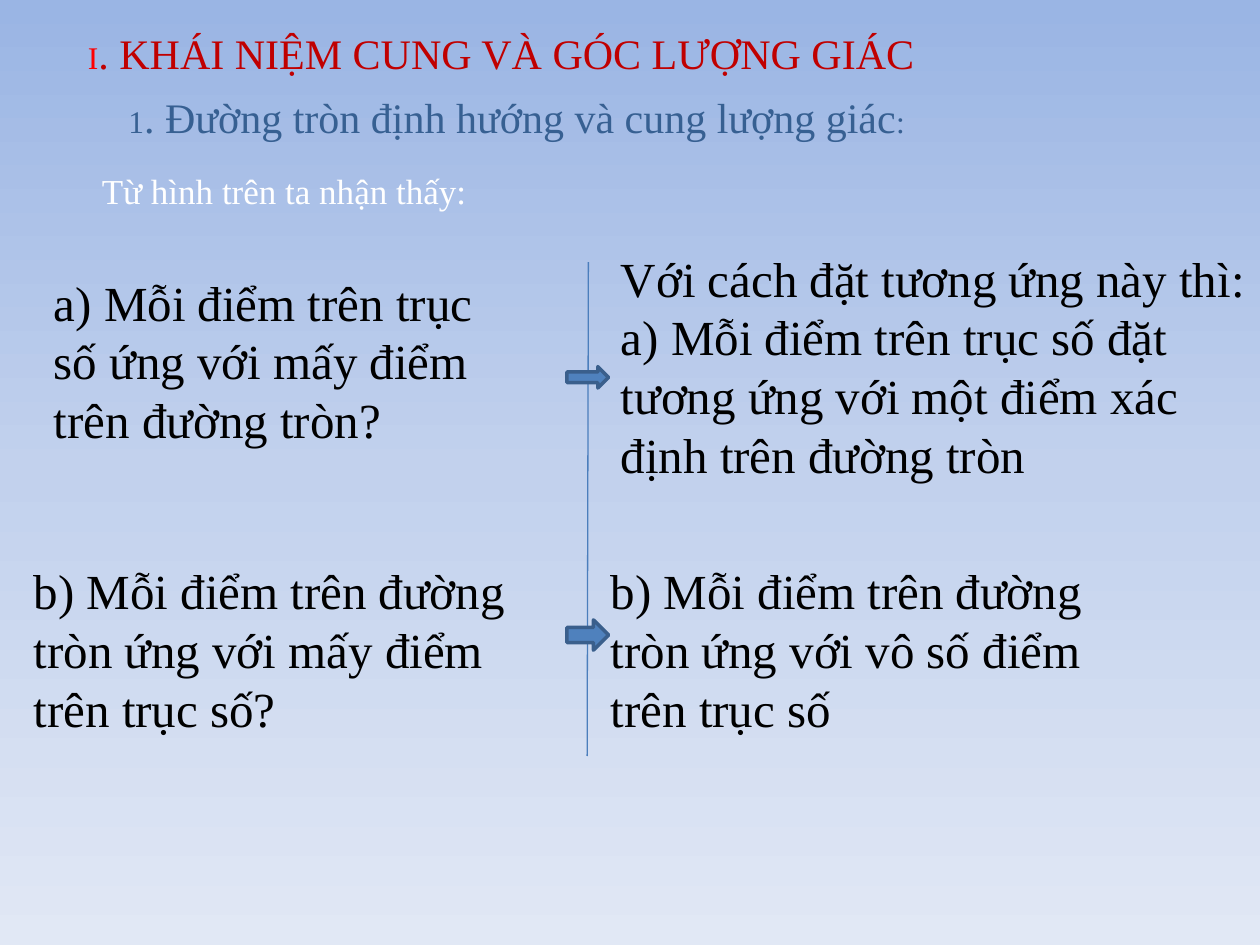
from copy import deepcopy

from lxml import etree
from pptx import Presentation
from pptx.dml.color import RGBColor
from pptx.enum import shapes, text
from pptx.oxml.ns import qn
from pptx.util import Inches, Pt

FONT = "Times New Roman"
BLACK = RGBColor(0x00, 0x00, 0x00)
WHITE = RGBColor(0xFF, 0xFF, 0xFF)
RED = RGBColor(0xFF, 0x00, 0x00)
DARK_RED = RGBColor(0xC0, 0x00, 0x00)
HEADING_BLUE = RGBColor(0x37, 0x60, 0x92)
DIVIDER_BLUE = RGBColor(0x4B, 0x7E, 0xBC)
ARROW_BLUE = RGBColor(0x4F, 0x81, 0xBD)
ARROW_EDGE = RGBColor(0x3A, 0x5F, 0x8C)
SKY = [(0, RGBColor(0x9A, 0xB5, 0xE4)),
       (0.5, RGBColor(0xC2, 0xD1, 0xED)),
       (1, RGBColor(0xE1, 0xE8, 0xF5))]


def add_text(slide, box, *paragraphs, size=28, color=BLACK, wrap=True):
    """Each paragraph is a string or a list of (text, size, color) runs."""
    frame = slide.shapes.add_textbox(*map(Inches, box)).text_frame
    frame.word_wrap = wrap
    frame.auto_size = text.MSO_AUTO_SIZE.SHAPE_TO_FIT_TEXT
    for index, content in enumerate(paragraphs):
        paragraph = frame.add_paragraph() if index else frame.paragraphs[0]
        runs = [(content, size, color)] if isinstance(content, str) else content
        for words, run_size, run_color in runs:
            run = paragraph.add_run()
            run.text = words
            run.font.name = FONT
            run.font.size = Pt(run_size)
            run.font.color.rgb = run_color


def paint_background(slide):
    fill = slide.background.fill
    fill.gradient()
    fill.gradient_angle = 270
    # The default gradient has two stops; add one between them
    first = slide.background._cSld.find(".//" + qn("a:gs"))
    first.addnext(deepcopy(first))
    for stop, (position, color) in zip(fill.gradient_stops, SKY):
        stop.position = position
        stop.color.rgb = color


def add_headings(slide, left, top):
    add_text(slide, (left, top, 7.33, 0.5),
             [("I", 18, RED), (". KHÁI NIỆM CUNG VÀ GÓC LƯỢNG GIÁC", 24, DARK_RED)])
    add_text(slide, (left + 0.32, top + 0.51, 6.42, 0.5),
             [("1", 18, HEADING_BLUE),
              (". Đường tròn định hướng và cung lượng giác", 24, HEADING_BLUE),
              (":", 18, HEADING_BLUE)], wrap=False)
    add_text(slide, (left + 0.11, top + 1.13, 8.08, 0.44),
             "Từ hình trên ta nhận thấy:", size=20, color=WHITE)


def add_divider(slide, start, end):
    divider = slide.shapes.add_connector(
        shapes.MSO_CONNECTOR.STRAIGHT, *map(Inches, start + end))
    divider.line.color.rgb = DIVIDER_BLUE
    divider.line.width = Pt(0.75)
    etree.SubElement(divider._element.spPr, qn("a:effectLst"))


def add_arrow(slide, box):
    arrow = slide.shapes.add_shape(shapes.MSO_SHAPE.RIGHT_ARROW, *map(Inches, box))
    arrow.shadow.inherit = False
    arrow.fill.solid()
    arrow.fill.fore_color.rgb = ARROW_BLUE
    arrow.line.color.rgb = ARROW_EDGE
    arrow.line.width = Pt(2)


def add_question(slide, question_box, question, answer_box, answer, arrow_box):
    add_text(slide, question_box, question)
    add_text(slide, answer_box, *answer)
    add_arrow(slide, arrow_box)


def main():
    deck = Presentation()
    deck.slide_width, deck.slide_height = Inches(10), Inches(7.5)
    slide = deck.slides.add_slide(deck.slide_layouts[6])
    paint_background(slide)
    add_headings(slide, 0.6, 0.17)
    add_divider(slide, (4.67, 2.08), (4.66, 6))

    # Question on the left, answer on the right of the divider
    add_question(
        slide,
        (0.33, 2.11, 3.83, 1.51),
        "a) Mỗi điểm trên trục số ứng với mấy điểm trên đường tròn?",
        (4.83, 1.92, 5.17, 1.99),
        ["Với cách đặt tương ứng này thì:",
         "a) Mỗi điểm trên trục số đặt tương ứng với một điểm xác định trên đường tròn"],
        (4.5, 2.91, 0.33, 0.17))
    add_question(
        slide,
        (0.17, 4.4, 4.17, 1.51),
        "b) Mỗi điểm trên đường tròn ứng với mấy điểm trên trục số?",
        (4.75, 4.4, 4.17, 1.51),
        ["b) Mỗi điểm trên đường tròn ứng với vô số điểm trên trục số"],
        (4.5, 4.92, 0.33, 0.24))
    deck.save("out.pptx")


if __name__ == "__main__":
    main()
